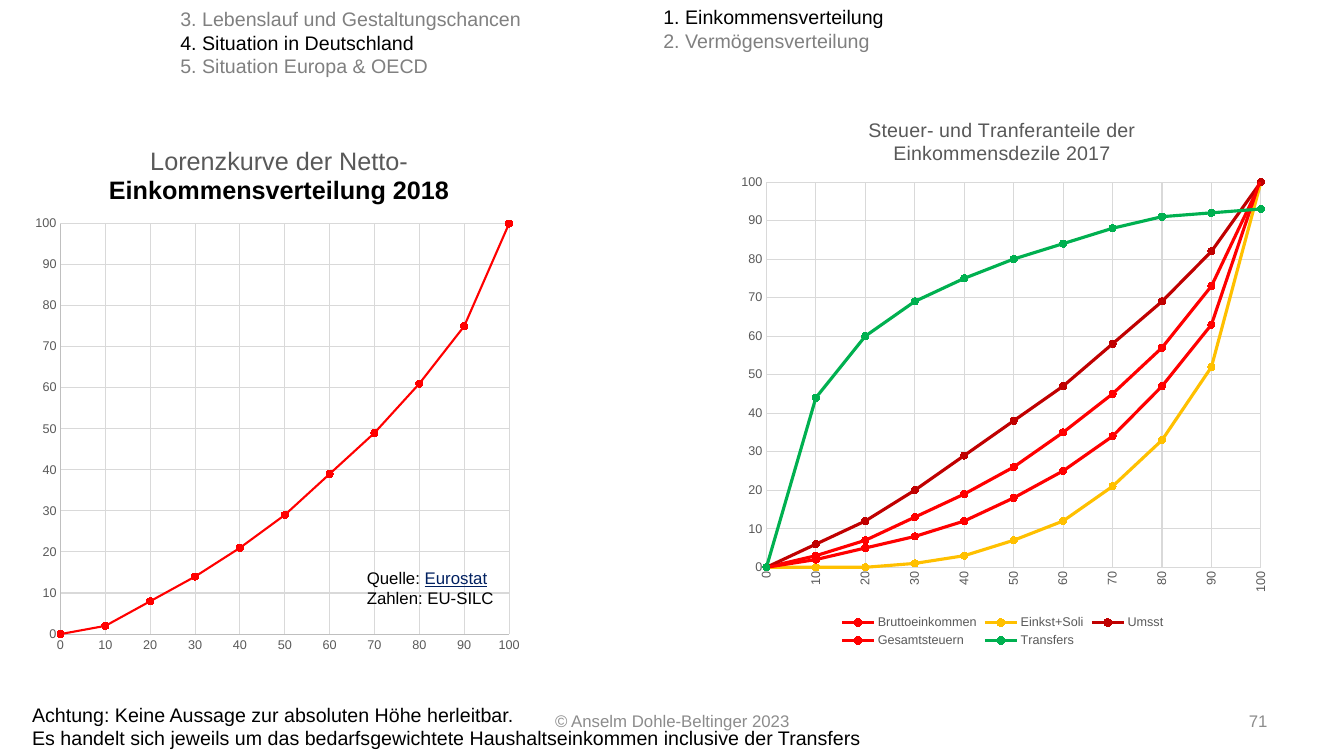
from dataclasses import dataclass

from lxml import etree
from pptx import Presentation
from pptx import util as u
from pptx.chart import data as chart_data
from pptx.dml.color import RGBColor
from pptx.enum import chart as ch
from pptx.enum import text as tx
from pptx.oxml import ns


@dataclass(frozen=True)
class Theme:
    """Font, colours and type sizes of the slide."""
    font: str = "Arial"
    ink: str = "000000"
    muted: str = "808080"
    footer: str = "8C8C8C"
    link: str = "002060"
    label: str = "595959"
    axis: str = "BFBFBF"
    grid: str = "D9D9D9"
    red: str = "FF0000"
    amber: str = "FFC000"
    dark_red: str = "C00000"
    green: str = "00B050"
    heading: int = 18
    body: int = 14
    small: int = 12
    tick: int = 9


THEME = Theme()
DECILES = range(0, 101, 10)
NET_INCOME = (0, 2, 8, 14, 21, 29, 39, 49, 61, 75, 100)
SHARES = (
    ("Bruttoeinkommen", THEME.red, (0, 3, 7, 13, 19, 26, 35, 45, 57, 73, 100)),
    ("Einkst+Soli", THEME.amber, (0, 0, 0, 1, 3, 7, 12, 21, 33, 52, 100)),
    ("Umsst", THEME.dark_red, (0, 6, 12, 20, 29, 38, 47, 58, 69, 82, 100)),
    ("Gesamtsteuern", THEME.red, (0, 2, 5, 8, 12, 18, 25, 34, 47, 63, 101)),
    ("Transfers", THEME.green, (0, 44, 60, 69, 75, 80, 84, 88, 91, 92, 93)),
)


def assign(target, **values):
    """Set several attributes on one object."""
    for name, value in values.items():
        setattr(target, name, value)


def inches(box):
    """Turn a box of plain numbers into lengths."""
    return [u.Inches(length) for length in box]


def style_font(font, size, color, **values):
    """Apply the theme font with a size and colour."""
    assign(font, name=THEME.font, size=u.Pt(size), **values)
    font.color.rgb = RGBColor.from_string(color)


def style_line(line, color, width=0.75):
    """Give a line its colour and width."""
    line.color.rgb = RGBColor.from_string(color)
    line.width = u.Pt(width)


def add_text(slide, box, lines, size, align=None, anchor=tx.MSO_ANCHOR.TOP, hanging=None):
    """Write lines made of (words, colour, underline) runs in a box."""
    frame = slide.shapes.add_textbox(*inches(box)).text_frame
    assign(frame, word_wrap=True, vertical_anchor=anchor)
    for number, runs in enumerate(lines):
        paragraph = frame.add_paragraph() if number else frame.paragraphs[0]
        if align is not None:
            paragraph.alignment = align
        if hanging:
            margin, indent = inches(hanging)
            properties = paragraph._p.get_or_add_pPr()
            properties.set("marL", str(margin))
            properties.set("indent", str(indent))
        for words, color, underline in runs:
            for part, piece in enumerate(words.split("\n")):
                if part:
                    paragraph.add_line_break()
                run = paragraph.add_run()
                run.text = piece
                style_font(run.font, size, color, underline=underline)


def set_layout(element, index, **fractions):
    """Place a chart part by fractions of the chart area."""
    for previous in element.findall(ns.qn("c:layout")):
        element.remove(previous)
    layout = etree.Element(ns.qn("c:layout"))
    manual = etree.SubElement(layout, ns.qn("c:manualLayout"))
    if "w" in fractions and index == 0:
        etree.SubElement(manual, ns.qn("c:layoutTarget")).set("val", "inner")
    for side in ("x", "y"):
        etree.SubElement(manual, ns.qn(f"c:{side}Mode")).set("val", "edge")
    for side, fraction in fractions.items():
        etree.SubElement(manual, ns.qn(f"c:{side}")).set("val", str(fraction))
    element.insert(index, layout)


def style_axis(axis, color):
    """Style one axis with its grid and labels."""
    assign(axis, has_major_gridlines=True, major_tick_mark=ch.XL_TICK_MARK.NONE,
           minor_tick_mark=ch.XL_TICK_MARK.NONE)
    style_line(axis.major_gridlines.format.line, THEME.grid)
    style_font(axis.tick_labels.font, THEME.tick, THEME.label)
    if color:
        style_line(axis.format.line, color)
    else:
        axis.format.line.fill.background()


def scale_percent(axis):
    """Run an axis from 0 to 100 in tens."""
    assign(axis, minimum_scale=0, maximum_scale=100, major_unit=10)
    assign(axis.tick_labels, number_format="0", number_format_is_linked=False)


def style_series(series, color, width):
    """Draw a straight line with round markers in one colour."""
    series.smooth = False
    style_line(series.format.line, color, width)
    assign(series.marker, style=ch.XL_MARKER_STYLE.CIRCLE, size=5)
    series.marker.format.fill.solid()
    series.marker.format.fill.fore_color.rgb = RGBColor.from_string(color)
    style_line(series.marker.format.line, color)


def add_title(chart, lines, size, x):
    """Write the chart title from (words, colour, bold) lines."""
    chart.has_title = True
    frame = chart.chart_title.text_frame
    for number, (words, color, bold) in enumerate(lines):
        paragraph = frame.add_paragraph() if number else frame.paragraphs[0]
        run = paragraph.add_run()
        run.text = words
        style_font(run.font, size, color, bold=bold)
    set_layout(chart.chart_title._element, 1, x=x, y=0.04)


def add_lorenz_curve(slide, box):
    """Plot the net income distribution with its source note."""
    curve = chart_data.XyChartData()
    points = curve.add_series("Series 1")
    for decile, share in zip(DECILES, NET_INCOME):
        points.add_data_point(decile, share)
    chart = slide.shapes.add_chart(ch.XL_CHART_TYPE.XY_SCATTER_LINES, *inches(box), curve).chart
    chart.has_legend = False
    style_font(chart.font, 10, THEME.ink)
    add_title(chart, (("Lorenzkurve der Netto-", THEME.label, False),
                      ("Einkommensverteilung 2018", THEME.ink, True)), THEME.heading, 0.16)
    for axis in (chart.category_axis, chart.value_axis):
        style_axis(axis, THEME.axis)
        scale_percent(axis)
    chart.plots[0].vary_by_categories = False
    style_series(chart.plots[0].series[0], THEME.red, 1.5)
    set_layout(chart._chartSpace.chart.plotArea, 0, x=0.07, y=0.19, w=0.89, h=0.76)
    left, top = box[:2]
    add_text(slide, (left + 3.29, top + 4.38, 1.5, 0.5),
             [[("Quelle: ", THEME.ink, False), ("Eurostat", THEME.link, True),
               (" Zahlen: EU-SILC", THEME.ink, False)]], THEME.small)


def add_share_chart(slide, box):
    """Plot tax and transfer shares by income decile."""
    shares = chart_data.CategoryChartData()
    shares.categories = [str(decile) for decile in DECILES]
    for name, _, values in SHARES:
        shares.add_series(name, values)
    chart = slide.shapes.add_chart(ch.XL_CHART_TYPE.LINE_MARKERS, *inches(box), shares).chart
    style_font(chart.font, 10, THEME.ink)
    add_title(chart, (("Steuer- und Tranferanteile der", THEME.label, False),
                      ("Einkommensdezile 2017", THEME.label, False)), THEME.body, 0.25)
    style_axis(chart.category_axis, THEME.grid)
    style_axis(chart.value_axis, None)
    scale_percent(chart.value_axis)
    labels = chart.category_axis._element.find(ns.qn("c:txPr"))
    labels.find(ns.qn("a:bodyPr")).set("rot", "-5400000")
    value_axis = chart.value_axis._element
    crossing = value_axis.find(ns.qn("c:crossBetween"))
    if crossing is None:
        crossing = etree.Element(ns.qn("c:crossBetween"))
        value_axis.find(ns.qn("c:crosses")).addnext(crossing)
    crossing.set("val", "midCat")
    chart.plots[0].vary_by_categories = False
    for series, (_, color, _) in zip(chart.plots[0].series, SHARES):
        style_series(series, color, 2.25)
    chart.has_legend = True
    assign(chart.legend, position=ch.XL_LEGEND_POSITION.BOTTOM, include_in_layout=False)
    style_font(chart.legend.font, THEME.tick, THEME.label)
    set_layout(chart.legend._element, 1, x=0.2, y=0.93, w=0.6, h=0.07)
    set_layout(chart._chartSpace.chart.plotArea, 0, x=0.07, y=0.16, w=0.9, h=0.69)


def add_agenda(slide, box, topics, current, hanging=None):
    """List topics with the current one in black."""
    lines = [[(topic, THEME.ink if topic == current else THEME.muted, False)] for topic in topics]
    add_text(slide, box, lines, THEME.body, hanging=hanging)


def add_footer(slide, box):
    """Write the caution, the author and the page number."""
    left, top = box[:2]
    for offset, width, words, align in (
            (4.34, 4.22, "© Anselm Dohle-Beltinger 2023", tx.PP_ALIGN.CENTER),
            (9.34, 3.11, "71", tx.PP_ALIGN.RIGHT)):
        add_text(slide, (left + offset, top + 0.03, width, 0.4), [[(words, THEME.footer, False)]],
                 THEME.small, align, tx.MSO_ANCHOR.MIDDLE)
    caution = ("Achtung: Keine Aussage zur absoluten Höhe herleitbar. \nEs handelt sich jeweils "
               "um das bedarfsgewichtete Haushaltseinkommen inclusive der Transfers")
    add_text(slide, (left, top, 9.33, 0.57), [[(caution, THEME.ink, False)]], THEME.body)


def main():
    """Build and save the slide."""
    deck = Presentation()
    assign(deck, slide_width=u.Inches(13.33), slide_height=u.Inches(7.5))
    slide = deck.slides.add_slide(deck.slide_layouts[6])
    add_footer(slide, (0.22, 6.92, 12.45, 0.57))
    add_agenda(slide, (1.69, 0.02, 3.7, 0.81),
               ("3. Lebenslauf und Gestaltungschancen", "4. Situation in Deutschland",
                "5. Situation Europa & OECD"), "4. Situation in Deutschland")
    add_lorenz_curve(slide, (0.25, 1.2, 5, 5.36))
    add_share_chart(slide, (7.22, 0.92, 5.45, 5.54))
    add_agenda(slide, (6.45, 0, 4.65, 0.57),
               ("1. Einkommensverteilung", "2. Vermögensverteilung"),
               "1. Einkommensverteilung", hanging=(0.59, -0.56))
    deck.save("out.pptx")


if __name__ == "__main__":
    main()
